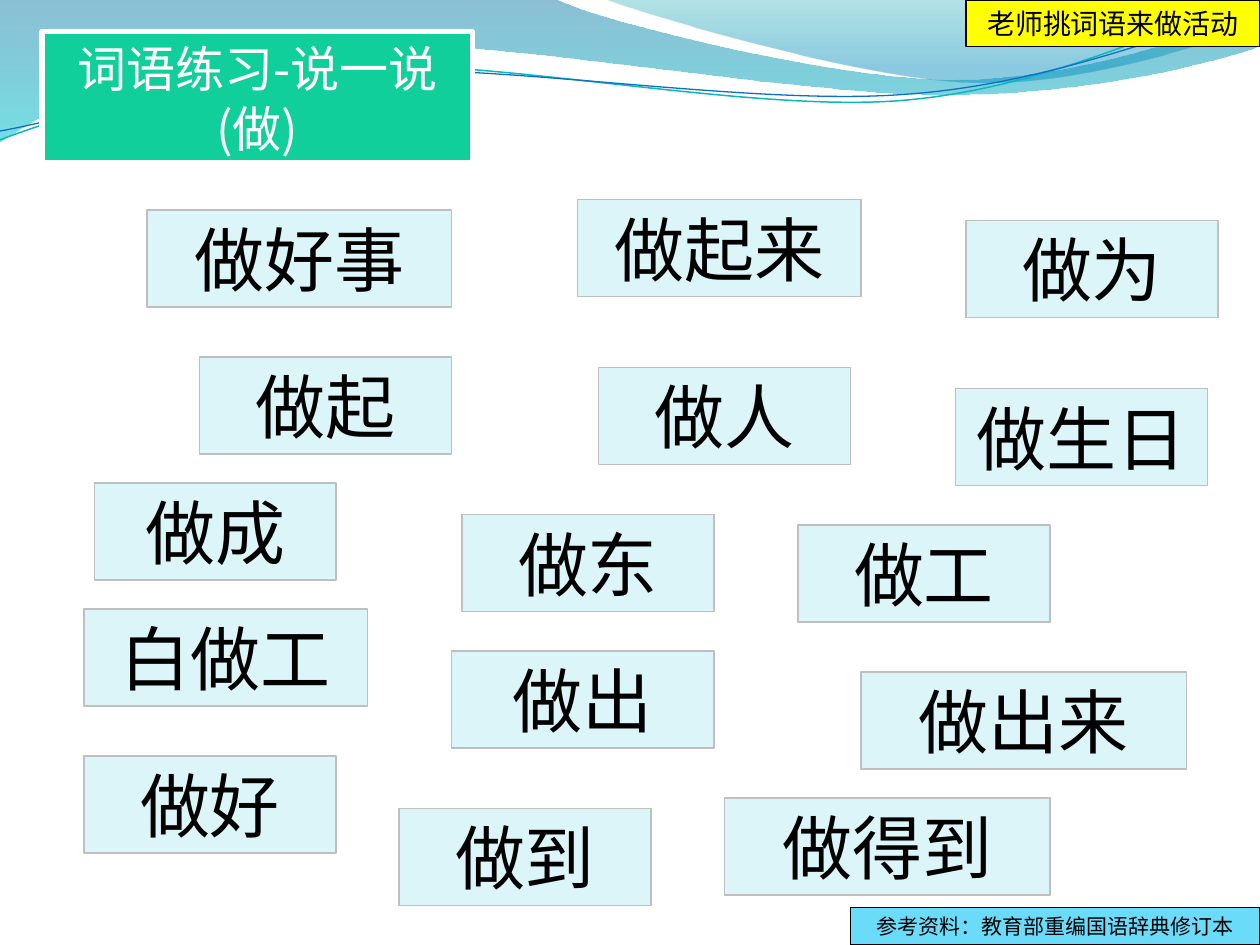
from lxml import etree
from pptx import Presentation, util as u
from pptx.dml.color import RGBColor
from pptx.enum import shapes, text
from pptx.oxml.ns import qn

THEME = {
    "font": "Noto Sans CJK SC",
    "word": {"fill": "DBF5F9", "line": "BFBFBF", "weight": 0.75, "size": 40, "ink": "000000"},
    "title": {"fill": "10CF9B", "line": "FFFFFF", "weight": 3, "size": 28, "ink": "FFFFFF"},
    "source": {"fill": "6BDBFA", "line": "000000", "weight": 0.75, "size": 12, "ink": "000000"},
    "hint": {"fill": "FFFF00", "line": "000000", "weight": 0.75, "size": 16, "ink": "000000"},
}
SLIDE_WIDTH, SLIDE_HEIGHT = 10, 7.5
CELL = 1 / 12
WORD_HEIGHT = 0.77
UNITS_PER_INCH = 1000

TITLE = "词语练习-说一说(做)"
HINT = "老师挑词语来做活动"
SOURCE = "参考资料：教育部重编国语辞典修订本"

# word, column, row, columns wide
WORDS = [
    ("做好", 8, 72, 24), ("做到", 38, 77, 24), ("做为", 92, 21, 24),
    ("做人", 57, 35, 24), ("做起", 19, 34, 24), ("做成", 9, 46, 23),
    ("做工", 76, 50, 24), ("做出来", 82, 64, 31), ("做得到", 69, 76, 31),
    ("做出", 43, 62, 25), ("做起来", 55, 19, 27), ("做东", 44, 49, 24),
    ("做生日", 91, 37, 24), ("做好事", 14, 20, 29), ("白做工", 8, 58, 27),
]

WAVES = [
    {"path": [(0, 0), (4.4, -0.01), (4.76, 0.17, 6.64, 0.63, 7.58, 0.63),
              (8.53, 0.63, 9.58, 0.26, 10, 0.09), (10.01, 0.36),
              (9.83, 0.44, 8.7, 0.76, 7.46, 0.75), (6.22, 0.75, 3.82, 0.28, 2.57, 0.34),
              (1.29, 0.36, 0.46, 0.83, -0.01, 1.13)],
     "stops": [(0, "0074A1", 45), (1, "00C6CF", 55)]},
    {"path": [(4.79, -0.01), (5.09, 0.11, 6.82, 0.62, 7.69, 0.65),
              (8.56, 0.69, 9.61, 0.32, 10, 0.21), (10, 0)],
     "stops": [(0, "00A1A9", 30), (0.8, "008BBF", 45)]},
    {"path": [(0, 1.11), (0.48, 0.93, 1.58, 0.57, 2.77, 0.52),
              (3.95, 0.47, 5.93, 0.89, 7.13, 0.8), (8.33, 0.71, 9.38, 0.15, 9.98, -0.02)],
     "line": ("0AB8BF", 0.85)},
    {"path": [(0, 1.04), (0.47, 0.96, 1.64, 0.61, 2.83, 0.56),
              (4.03, 0.51, 5.97, 0.84, 7.17, 0.75), (8.36, 0.67, 9.41, 0.21, 10, 0.06)],
     "line": ("0F6FC6", 0.75)},
]


def rgb(code):
    return RGBColor.from_string(code)


def outline(slide, path, closed):
    steps = [[round(value * UNITS_PER_INCH) for value in step] for step in path]
    anchors = [step[-2:] for step in steps]
    left, top = (min(axis) for axis in zip(*anchors))
    builder = slide.shapes.build_freeform(*anchors[0], scale=u.Inches(1) / UNITS_PER_INCH)
    builder.add_line_segments(anchors[1:], close=closed)
    band = builder.convert_to_shape()
    for segment, step in zip(list(band._element.iter(qn("a:lnTo"))), steps[1:]):
        if len(step) == 2:
            continue
        curve = etree.Element(qn("a:cubicBezTo"))
        for x, y in zip(step[::2], step[1::2]):
            etree.SubElement(curve, qn("a:pt"), x=str(x - left), y=str(y - top))
        segment.getparent().replace(segment, curve)
    return band


def draw_wave(slide, wave):
    band = outline(slide, wave["path"], "stops" in wave)
    band.shadow.inherit = False
    if "line" in wave:
        colour, weight = wave["line"]
        band.fill.background()
        band.line.color.rgb = rgb(colour)
        band.line.width = u.Pt(weight)
        return
    band.line.fill.background()
    band.fill.gradient()
    band.fill.gradient_angle = 270
    for stop, (position, colour, _) in zip(band.fill.gradient_stops, wave["stops"]):
        stop.position = position
        stop.color.rgb = rgb(colour)
    for colour, (_, _, opacity) in zip(band._element.iter(qn("a:srgbClr")), wave["stops"]):
        etree.SubElement(colour, qn("a:alpha"), val=str(opacity * 1000))


def dress(label, wording, look, left, top, width, height):
    box = {"left": left, "top": top, "width": width, "height": height}
    for name, inches in box.items():
        setattr(label, name, u.Inches(inches))
    label.fill.solid()
    label.fill.fore_color.rgb = rgb(look["fill"])
    label.line.color.rgb = rgb(look["line"])
    label.line.width = u.Pt(look["weight"])
    frame = label.text_frame
    frame_format = {"word_wrap": True, "auto_size": text.MSO_AUTO_SIZE.NONE,
                    "vertical_anchor": text.MSO_ANCHOR.MIDDLE,
                    "margin_top": 0, "margin_bottom": 0}
    for name, value in frame_format.items():
        setattr(frame, name, value)
    paragraph = frame.paragraphs[0]
    paragraph.alignment = text.PP_ALIGN.CENTER
    run = paragraph.add_run()
    run.text = wording
    run.font.color.rgb = rgb(look["ink"])
    for name, value in {"name": THEME["font"], "size": u.Pt(look["size"])}.items():
        setattr(run.font, name, value)
    etree.SubElement(run._r.get_or_add_rPr(), qn("a:ea"), typeface=THEME["font"])


def add_label(slide, *content):
    label = slide.shapes.add_shape(shapes.MSO_SHAPE.RECTANGLE, 0, 0, 0, 0)
    label.shadow.inherit = False
    dress(label, *content)


def add_title(slide):
    title = slide.shapes.title
    slide.shapes._spTree.append(title._element)
    dress(title, TITLE, THEME["title"], 4 * CELL, 3 * CELL, 41 * CELL, 1.04)
    title.text_frame.margin_top = u.Inches(0.01)
    title.text_frame.paragraphs[0].line_spacing = u.Pt(34)


def main():
    deck = Presentation()
    deck.slide_width, deck.slide_height = u.Inches(SLIDE_WIDTH), u.Inches(SLIDE_HEIGHT)
    slide = deck.slides.add_slide(deck.slide_layouts.get_by_name("Title Only"))
    for wave in WAVES:
        draw_wave(slide, wave)
    add_title(slide)
    for word, column, row, columns in WORDS:
        add_label(slide, word, THEME["word"],
                  column * CELL, row * CELL, columns * CELL, WORD_HEIGHT)
    add_label(slide, SOURCE, THEME["source"], 81 * CELL, SLIDE_HEIGHT - 0.3, 39 * CELL, 0.3)
    add_label(slide, HINT, THEME["hint"], 92 * CELL, 0, 28 * CELL, 0.37)
    deck.save("out.pptx")


if __name__ == "__main__":
    main()
